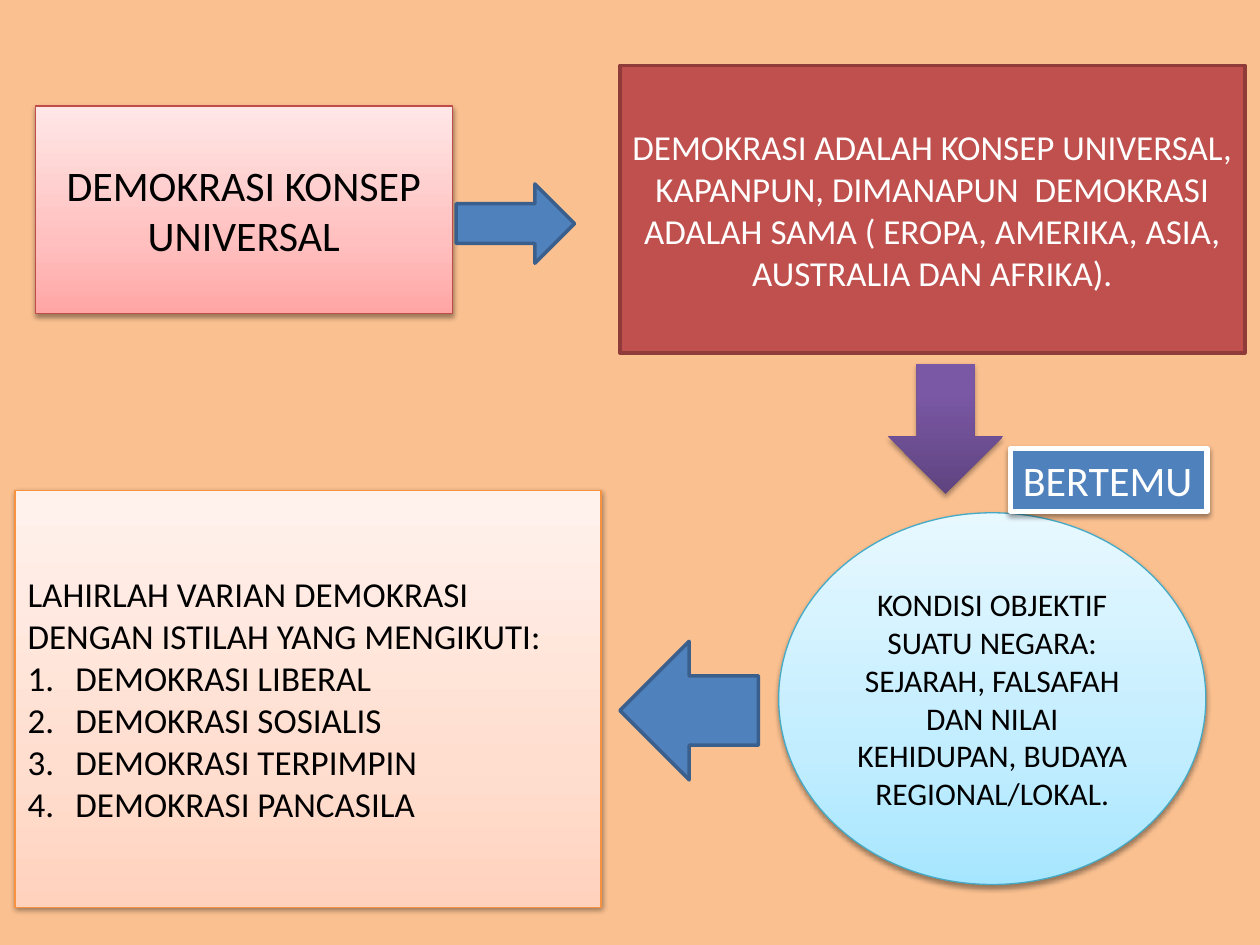
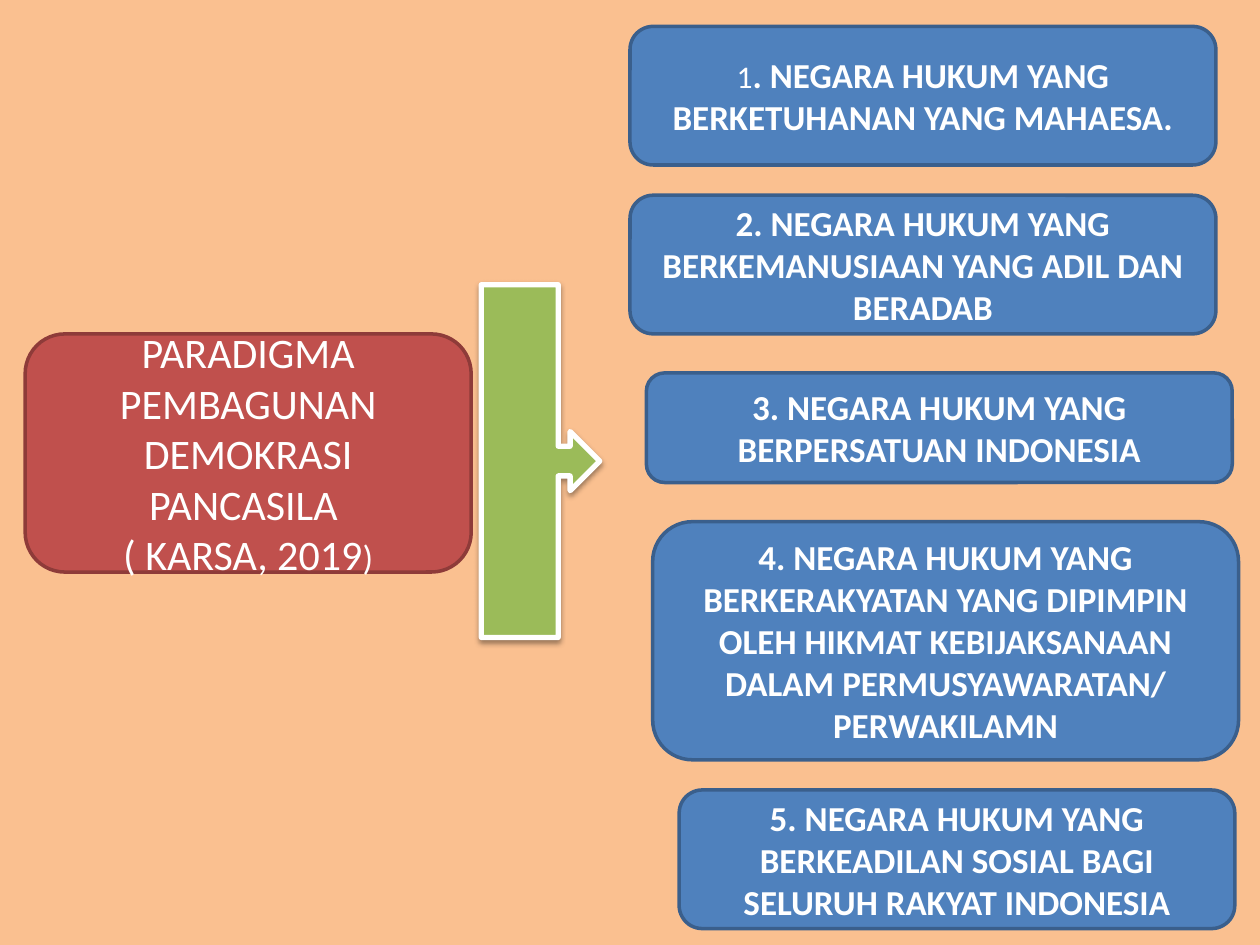
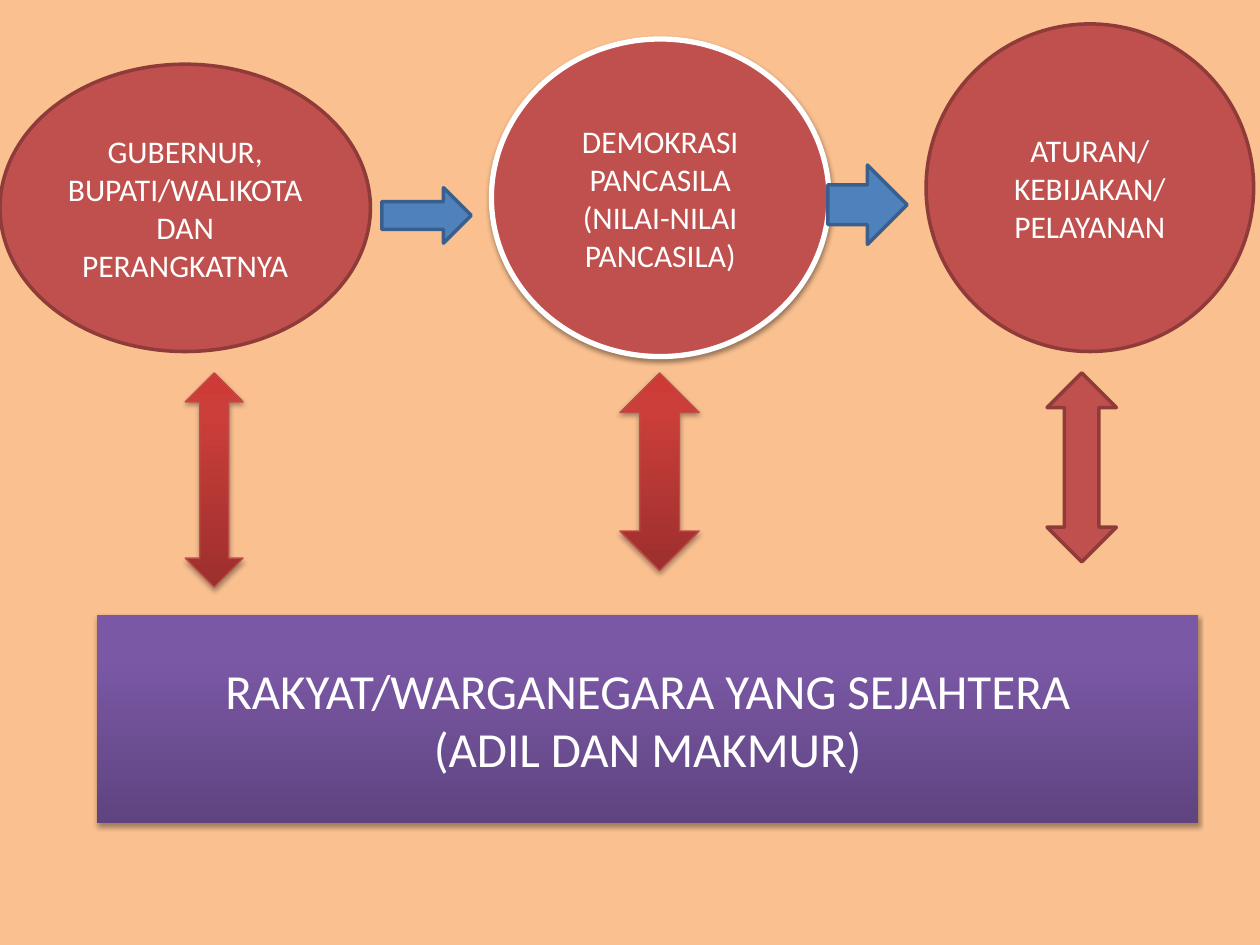
from dataclasses import dataclass

from lxml.etree import SubElement
from pptx import Presentation
from pptx.dml.color import RGBColor
from pptx.enum.lang import MSO_LANGUAGE_ID as Language
from pptx.enum.shapes import MSO_SHAPE as Kind
from pptx.enum.text import MSO_ANCHOR as Anchor, MSO_AUTO_SIZE as AutoSize, PP_ALIGN as Align
from pptx.oxml.ns import qn
from pptx.util import Inches, Pt


@dataclass(frozen=True)
class Shadow:
    opacity: int
    distance: float
    blur: float = 3.1


@dataclass(frozen=True)
class Look:
    fill: str | tuple
    line: str | None = None
    weight: float = 0.75
    shadow: Shadow | None = None
    text: str = "FFFFFF"


SOFT = Shadow(38, 1.6)
DEEP = Shadow(35, 1.8)


@dataclass(frozen=True)
class Theme:
    font: str = "Calibri"
    background: str = "FAC090"
    banner: int = 28
    heading: int = 24
    body: int = 20
    small: int = 18
    blue: Look = Look("4F81BD", "3A5F8C", 2)
    red: Look = Look("C0504D", "8E3B39", 2)
    blue_label: Look = Look("4F81BD", "FFFFFF", 3, SOFT)
    red_framed: Look = Look("C0504D", "FFFFFF", 3, SOFT)
    green_framed: Look = Look("9BBB59", "FFFFFF", 3, SOFT)
    pink: Look = Look(((0, "FFA6A5"), (35, "FFC0BF"), (100, "FFE7E7")), "BF4C48", 0.75, SOFT, "000000")
    peach: Look = Look(((0, "FFD2BD"), (35, "FFDED0"), (100, "FFF2ED")), "F69240", 0.75, SOFT, "000000")
    sky: Look = Look(((0, "A7E6FF"), (35, "C1EDFF"), (100, "E7F8FF")), "46AAC5", 0.75, SOFT, "000000")
    purple: Look = Look(((0, "5F4480"), (80, "7B58A6"), (100, "7C57A8")), shadow=DEEP)
    crimson: Look = Look(((0, "9C2F2D"), (80, "CB3E3A"), (100, "CE3B37")), "BF4C48", 0.75, DEEP)


def add_color(parent, color):
    return SubElement(parent, qn("a:srgbClr"), val=color)


def write_span(para, text, *, font, size, color, bold=False):
    span = para.add_run()
    span.text = text
    span.font.name = font
    span.font.size = Pt(size)
    span.font.bold = bold
    span.font.color.rgb = RGBColor.from_string(color)
    span.font.language_id = Language.INDONESIAN


class Builder:
    def __init__(self, theme):
        self.theme = theme
        self.deck = Presentation()
        self.deck.slide_width = Inches(10)
        self.deck.slide_height = Inches(7.5)
        fill = self.deck.slide_master.background.fill
        fill.solid()
        fill.fore_color.rgb = RGBColor.from_string(theme.background)
        self.page = None

    def new_page(self):
        self.page = self.deck.slides.add_slide(self.deck.slide_layouts[6])

    def shape(self, kind, at, look):
        box = self.page.shapes.add_shape(kind, *map(Inches, at))
        self.paint_fill(box, look.fill)
        if look.line:
            box.line.color.rgb = RGBColor.from_string(look.line)
            box.line.width = Pt(look.weight)
        else:
            box.line.fill.background()
        box.shadow.inherit = False
        if look.shadow:
            self.cast_shadow(box, look.shadow)
        return box

    def paint_fill(self, box, fill):
        if isinstance(fill, str):
            box.fill.solid()
            box.fill.fore_color.rgb = RGBColor.from_string(fill)
            return
        box.fill.gradient()
        box.fill.gradient_angle = 90
        stops = box._element.spPr.find(".//" + qn("a:gsLst"))
        for stop in list(stops):
            stops.remove(stop)
        for position, color in fill:
            add_color(SubElement(stops, qn("a:gs"), pos=str(position * 1000)), color)

    def cast_shadow(self, box, shadow):
        effects = box._element.spPr.find(qn("a:effectLst"))
        outer = SubElement(
            effects, qn("a:outerShdw"), blurRad=str(Pt(shadow.blur)),
            dist=str(Pt(shadow.distance)), dir="5400000", rotWithShape="0",
        )
        SubElement(add_color(outer, "000000"), qn("a:alpha"), val=str(shadow.opacity * 1000))

    def panel(self, kind, at, look, lines, size, align=Align.CENTER, bold=False):
        box = self.shape(kind, at, look)
        frame = box.text_frame
        frame.word_wrap = True
        frame.vertical_anchor = Anchor.MIDDLE
        for index, line in enumerate(lines):
            para = frame.paragraphs[0] if index == 0 else frame.add_paragraph()
            para.alignment = align
            spans = [(line, {})] if isinstance(line, str) else line
            for text, changes in spans:
                style = {"size": size, "bold": bold} | changes
                write_span(para, text, font=self.theme.font, color=look.text, **style)
        return box

    def numbered_panel(self, at, look, intro, items, size):
        box = self.panel(Kind.RECTANGLE, at, look, [intro, *items], size, Align.LEFT)
        for para in box.text_frame.paragraphs[1:]:
            properties = para._p.get_or_add_pPr()
            properties.set("marL", str(Inches(0.38)))
            properties.set("indent", str(-Inches(0.38)))
            SubElement(properties, qn("a:buFont"), typeface="+mj-lt")
            SubElement(properties, qn("a:buAutoNum"), type="arabicPeriod")

    def label(self, at, look, text, size):
        box = self.panel(Kind.RECTANGLE, at, look, [text], size, Align.LEFT)
        box.text_frame.word_wrap = False
        box.text_frame.vertical_anchor = Anchor.TOP
        box.text_frame.auto_size = AutoSize.SHAPE_TO_FIT_TEXT


def build_concept(builder):
    theme = builder.theme
    builder.new_page()
    builder.panel(Kind.RECTANGLE, (0.28, 0.84, 3.31, 1.65), theme.pink,
                  ["DEMOKRASI KONSEP UNIVERSAL"], theme.heading)
    builder.panel(
        Kind.RECTANGLE, (4.92, 0.52, 4.96, 2.28), theme.red,
        ["DEMOKRASI ADALAH KONSEP UNIVERSAL, KAPANPUN, DIMANAPUN  DEMOKRASI "
         "ADALAH SAMA ( EROPA, AMERIKA, ASIA, AUSTRALIA DAN AFRIKA)."],
        theme.body,
    )
    variants = [f"DEMOKRASI {name}" for name in ("LIBERAL", "SOSIALIS", "TERPIMPIN", "PANCASILA")]
    builder.numbered_panel(
        (0.12, 3.89, 4.65, 3.31), theme.peach,
        "LAHIRLAH VARIAN DEMOKRASI DENGAN ISTILAH YANG MENGIKUTI:", variants, theme.body,
    )
    builder.panel(
        Kind.OVAL, (6.18, 4.07, 3.39, 2.95), theme.sky,
        ["KONDISI OBJEKTIF SUATU NEGARA: SEJARAH, FALSAFAH DAN NILAI KEHIDUPAN, "
         "BUDAYA REGIONAL/LOKAL."],
        theme.small,
    )
    builder.shape(Kind.RIGHT_ARROW, (3.62, 1.46, 0.94, 0.63), theme.blue)
    builder.shape(Kind.DOWN_ARROW, (7.05, 2.89, 0.91, 1.03), theme.purple)
    builder.label((8.02, 3.56, 1.56, 0.5), theme.blue_label, "BERTEMU", theme.heading)
    builder.shape(Kind.LEFT_ARROW, (4.92, 5.09, 1.1, 1.1), theme.blue)


def build_paradigm(builder):
    theme = builder.theme
    builder.new_page()
    builder.panel(
        Kind.ROUNDED_RECTANGLE, (0.2, 2.65, 3.54, 1.89), theme.red,
        ["PARADIGMA PEMBAGUNAN DEMOKRASI PANCASILA ",
         [("( KARSA, 2019", {}), (")", {"size": theme.body})]],
        theme.heading,
    )
    first = [("1", {"size": theme.small, "bold": False}),
             (". NEGARA HUKUM YANG BERKETUHANAN YANG MAHAESA.", {})]
    principles = [
        ((5, 0.21, 4.65, 1.1), first),
        ((5, 1.55, 4.65, 1.1), "2. NEGARA HUKUM YANG BERKEMANUSIAAN YANG ADIL DAN BERADAB"),
        ((5.13, 2.96, 4.65, 0.87), "3. NEGARA HUKUM YANG BERPERSATUAN INDONESIA"),
        ((5.18, 4.14, 4.65, 1.89),
         "4. NEGARA HUKUM YANG BERKERAKYATAN YANG DIPIMPIN OLEH HIKMAT KEBIJAKSANAAN "
         "DALAM PERMUSYAWARATAN/ PERWAKILAMN"),
        ((5.39, 6.27, 4.41, 1.1),
         "5. NEGARA HUKUM YANG BERKEADILAN SOSIAL BAGI SELURUH RAKYAT INDONESIA"),
    ]
    for at, line in principles:
        builder.panel(Kind.ROUNDED_RECTANGLE, at, theme.blue, [line], theme.body, bold=True)
    builder.shape(Kind.RIGHT_ARROW_CALLOUT, (3.82, 2.26, 0.94, 2.8), theme.green_framed)


def build_governance(builder):
    theme = builder.theme
    builder.new_page()
    actors = [
        ((0, 0.51, 2.94, 2.28), theme.red, "GUBERNUR, BUPATI/WALIKOTA DAN PERANGKATNYA"),
        ((3.9, 0.31, 2.68, 2.52), theme.red_framed, "DEMOKRASI PANCASILA (NILAI-NILAI PANCASILA)"),
        ((7.35, 0.19, 2.6, 2.6), theme.red, "ATURAN/KEBIJAKAN/PELAYANAN"),
    ]
    for at, look, line in actors:
        builder.panel(Kind.OVAL, at, look, [line], theme.small)
    builder.panel(Kind.RECTANGLE, (0.77, 4.88, 8.74, 1.65), theme.purple,
                  ["RAKYAT/WARGANEGARA YANG SEJAHTERA", "(ADIL DAN MAKMUR)"], theme.banner)
    for at in ((3.03, 1.49, 0.71, 0.44), (6.57, 1.31, 0.63, 0.63)):
        builder.shape(Kind.RIGHT_ARROW, at, theme.blue)
    exchanges = [
        (1.47, 0.46, 1.7, theme.crimson),
        (4.92, 0.63, 1.57, theme.crimson),
        (8.31, 0.55, 1.5, theme.red),
    ]
    for left, width, height, look in exchanges:
        builder.shape(Kind.UP_DOWN_ARROW, (left, 2.96, width, height), look)


def main():
    builder = Builder(Theme())
    build_concept(builder)
    build_paradigm(builder)
    build_governance(builder)
    builder.deck.save("out.pptx")


if __name__ == "__main__":
    main()
